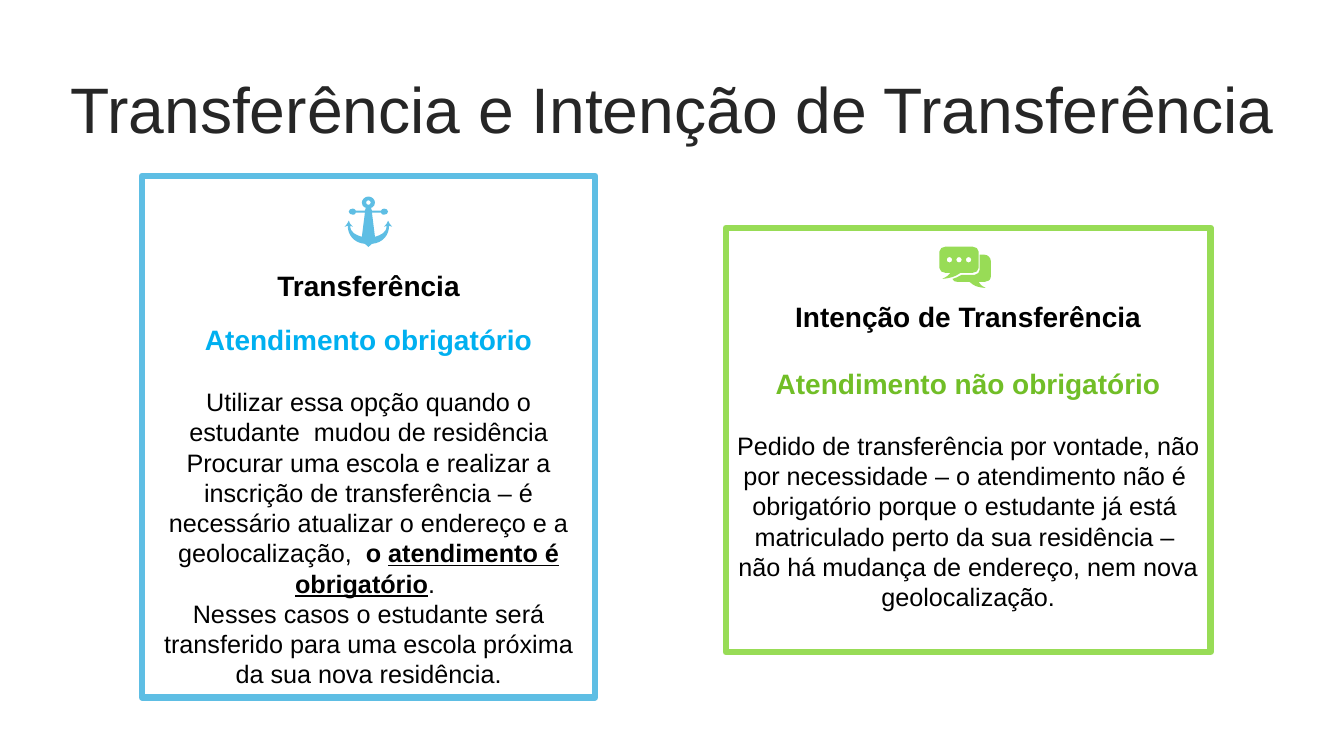
from lxml.etree import SubElement
from pptx import Presentation
from pptx.dml.color import RGBColor
from pptx.enum.shapes import MSO_SHAPE
from pptx.enum.text import MSO_ANCHOR, PP_ALIGN
from pptx.oxml.ns import qn
from pptx.util import Pt

COLORS = {"title": "262626", "text": "000000", "blue": "5EBEE4", "green": "98DC56",
          "blue_text": "00B0F0", "green_text": "71BE27"}
FONT = "Arial"
TITLE = "Transferência e Intenção de Transferência"

# Paragraph: (space before, size, color, runs); run: (text, bold, underline)
CARDS = [
    {"box": (101.5, 125.6, 323.6, 372.7), "line": "blue", "top": 66.4, "paragraphs": [
        (0, 20, "text", [("Transferência", True, False)]),
        (14.4, 20, "blue_text", [("Atendimento obrigatório", True, False)]),
        (21.6, 18, "text", [
            ("Utilizar essa opção quando o estudante  mudou de residência Procurar uma "
             "escola e realizar a inscrição de transferência – é necessário atualizar o "
             "endereço e a geolocalização,  ", False, False),
            ("o ", True, False),
            ("atendimento é obrigatório", True, True),
            (". ", False, False)]),
        (0, 18, "text", [
            ("Nesses casos o estudante será transferido para uma escola próxima da sua "
             "nova residência.", False, False)]),
    ]},
    {"box": (518.4, 162.7, 346.3, 303.1), "line": "green", "top": 50.9, "paragraphs": [
        (0, 20, "text", [("Intenção de Transferência", True, False)]),
        (24, 20, "green_text", [("Atendimento não obrigatório", True, False)]),
        (21.6, 18, "text", [
            ("Pedido de transferência por vontade, não por necessidade – o atendimento "
             "não é ", False, False)]),
        (0, 18, "text", [("obrigatório porque o estudante já está ", False, False)]),
        (0, 18, "text", [("matriculado perto da sua residência – ", False, False)]),
        (0, 18, "text", [("não há mudança de endereço, nem nova geolocalização.",
                          False, False)]),
    ]},
]

# Outlines: a pair is a corner, six numbers are a Bézier curve
ICON_UNIT = 0.72
ANCHOR_AT = (263.2, 140.4)
ANCHOR_RIGHT_HALF = [
    (0, 0), (3.5, 0, 6.5, 3, 6.5, 6), (6.5, 8, 5.5, 10, 3.5, 11), (2.5, 11), (3.5, 14),
    (12.5, 14), (13, 13, 14, 12, 15.5, 12), (17.5, 12, 19.5, 13, 19.5, 15),
    (19.5, 17, 17.5, 18, 15.5, 18), (14, 18, 13, 18, 12.5, 16), (3.5, 16), (6.5, 40),
    (12.5, 38, 18, 36, 18, 29), (17.5, 29, 16.5, 29, 15.5, 30),
    (17.5, 28, 19, 26, 19.5, 24), (20.5, 26, 21.5, 28, 23.5, 30),
    (22.5, 29, 21.5, 29, 20.5, 29), (20.5, 38, 14.5, 46, 3.5, 47),
    (1.5, 48, 1.5, 49, 0, 50),
]
CHAT_AT = (671, 176.2)
CHAT_BACK = [
    (40, 8), (45, 8), (48, 8, 51, 11, 51, 14), (51, 30), (51, 33, 48, 35, 45, 35),
    (39, 35), (41, 37, 40, 38, 46, 41), (36, 40, 35, 39, 30, 35), (18, 35),
    (15, 35, 14, 34, 13, 32), (16, 31, 19, 30, 22, 28), (35, 28),
    (38, 28, 40, 25, 40, 23),
]
CHAT_FRONT = [
    (6, 0), (33, 0), (36, 0, 39, 2, 39, 5), (39, 21), (39, 24, 36, 26, 33, 26),
    (21, 26), (15, 30, 12, 31, 3, 32), (8, 29, 9, 29, 11, 26), (6, 26),
    (3, 26, 0, 24, 0, 21), (0, 5), (0, 2, 3, 0, 6, 0),
]
CHAT_DOTS = [(10, 13), (19.5, 13), (29, 13)]


def rgb(name):
    return RGBColor.from_string(COLORS[name])


def circle(x, y, r):
    k = 0.55 * r
    return [(x, y - r),
            (x - k, y - r, x - r, y - k, x - r, y), (x - r, y + k, x - k, y + r, x, y + r),
            (x + k, y + r, x + r, y + k, x + r, y), (x + r, y - k, x + k, y - r, x, y - r)]


def with_mirror(half):
    """Continue an outline with its reflection in x = 0, back to the start."""
    outline = list(half)
    for before, seg in zip(half[-2::-1], half[:0:-1]):
        x, y = before[-2:]
        if len(seg) == 2:
            outline.append((-x, y))
        else:
            x1, y1, x2, y2 = seg[:4]
            outline.append((-x2, y2, -x1, y1, -x, y))
    return outline


def add_icon(slide, at, outlines, color):
    """Draw outlines as one filled shape; inner outlines become holes."""
    left, top = at

    def place(x, y):
        return Pt(left + x * ICON_UNIT), Pt(top + y * ICON_UNIT)

    fb = slide.shapes.build_freeform(*place(*outlines[0][0]), scale=1.0)
    for i, outline in enumerate(outlines):
        if i:
            fb.move_to(*place(*outline[0]))
        fb.add_line_segments([place(*seg[-2:]) for seg in outline[1:]], close=False)
    sp = fb.convert_to_shape()
    sp.shadow.inherit = False
    sp.fill.solid()
    sp.fill.fore_color.rgb = rgb(color)
    sp.line.fill.background()

    segments = [seg for outline in outlines for seg in outline[1:]]
    for line, seg in zip(list(sp.element.iter(qn("a:lnTo"))), segments):
        if len(seg) == 6:
            line.tag = qn("a:cubicBezTo")
            line.remove(line[0])
            for xy in (seg[:2], seg[2:4], seg[4:]):
                x, y = place(*xy)
                SubElement(line, qn("a:pt"), x=str(x - sp.left), y=str(y - sp.top))


def add_run(p, text, size, color, bold=False, underline=False):
    r = p.add_run()
    r.text = text
    r.font.name = FONT
    r.font.size = Pt(size)
    r.font.bold = bold
    r.font.underline = underline
    r.font.color.rgb = rgb(color)


def add_title(slide):
    tf = slide.shapes.add_textbox(Pt(24.5), Pt(54), Pt(911.5), Pt(56.9)).text_frame
    tf.word_wrap = True
    tf.vertical_anchor = MSO_ANCHOR.MIDDLE
    p = tf.paragraphs[0]
    p.alignment = PP_ALIGN.CENTER
    p.line_spacing = 0.8
    add_run(p, TITLE, 45.9, "title")


def add_card(slide, card):
    sp = slide.shapes.add_shape(MSO_SHAPE.RECTANGLE, *map(Pt, card["box"]))
    sp.shadow.inherit = False
    sp.fill.background()
    sp.line.color.rgb = rgb(card["line"])
    sp.line.width = Pt(4.5)
    tf = sp.text_frame
    tf.word_wrap = True
    tf.vertical_anchor = MSO_ANCHOR.TOP
    tf.margin_top = Pt(card["top"])
    for i, (before, size, color, runs) in enumerate(card["paragraphs"]):
        p = tf.add_paragraph() if i else tf.paragraphs[0]
        p.alignment = PP_ALIGN.CENTER
        p.space_before = Pt(before)
        p.line_spacing = Pt(size * 1.2)
        for text, bold, underline in runs:
            add_run(p, text, size, color, bold, underline)


def main():
    prs = Presentation()
    prs.slide_width, prs.slide_height = Pt(960), Pt(540)
    slide = prs.slides.add_slide(prs.slide_layouts[6])
    add_title(slide)

    dots = [circle(x, y, 2.75) for x, y in CHAT_DOTS]
    add_icon(slide, CHAT_AT, [CHAT_BACK, CHAT_FRONT, *dots], "green")
    add_icon(slide, ANCHOR_AT, [with_mirror(ANCHOR_RIGHT_HALF), circle(0, 6, 2.3)], "blue")

    for card in CARDS:
        add_card(slide, card)
    prs.save("out.pptx")


if __name__ == "__main__":
    main()
